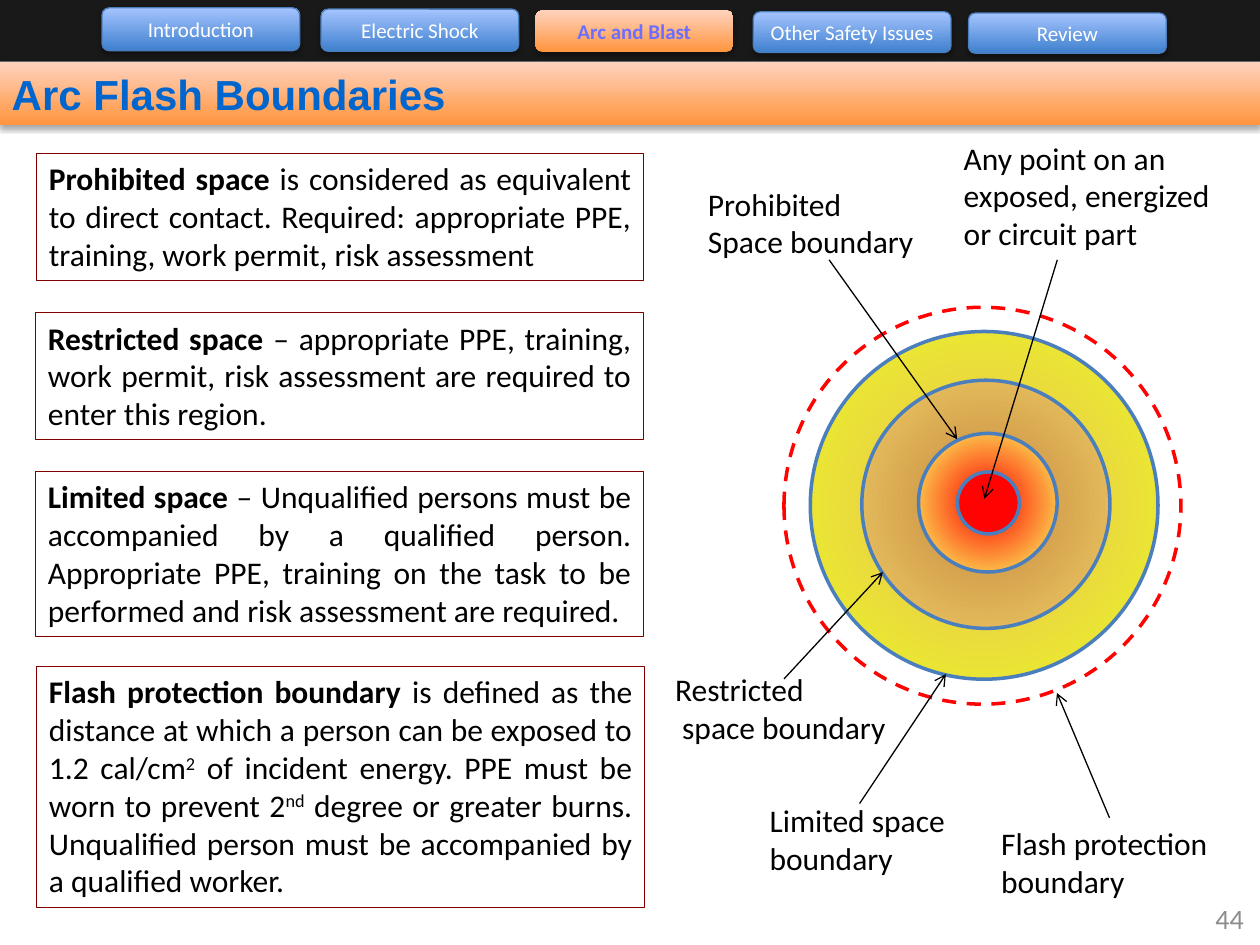
from lxml.etree import SubElement
from pptx import Presentation
from pptx.dml.color import RGBColor
from pptx.enum.dml import MSO_LINE
from pptx.enum.shapes import MSO_CONNECTOR, MSO_SHAPE
from pptx.enum.text import MSO_ANCHOR, MSO_AUTO_SIZE, PP_ALIGN
from pptx.oxml.ns import qn
from pptx.util import Pt

BLUE = ("3F80CE", "A4C4FF")
ORANGE = ("FF953E", "FFD2BD")
OUTLINE = "4B7EBC"
BLACK = "000000"
RED = "FF0202"


def color(value):
    return RGBColor.from_string(value)


class SlideBuilder:
    body_font = "Calibri"
    body_size = 18

    def __init__(self, slide):
        self.slide = slide
        self.shapes = slide.shapes

    def set_text(self, frame, text, size=body_size, fill=BLACK, bold=False,
                 align=PP_ALIGN.LEFT, font=body_font):
        frame.text = text
        for paragraph in frame.paragraphs:
            paragraph.alignment = align
            for run in paragraph.runs:
                self.style(run, size, fill, bold, font)

    def style(self, run, size=body_size, fill=BLACK, bold=False, font=body_font):
        run.font.size = Pt(size)
        run.font.name = font
        run.font.bold = bold
        run.font.color.rgb = color(fill)

    def outline(self, shape, value, width):
        shape.line.color.rgb = color(value)
        shape.line.width = Pt(width)

    def gradient(self, shape, colors, end=1.0):
        shape.fill.gradient()
        shape.fill.gradient_angle = 90
        for stop, value, position in zip(shape.fill.gradient_stops, colors, (0, end)):
            stop.color.rgb = color(value)
            stop.position = position

    def radial(self, shape, colors, end):
        self.gradient(shape, colors, end)
        grad = shape._element.spPr.find(qn("a:gradFill"))
        grad.remove(grad.find(qn("a:lin")))
        circle = SubElement(grad, qn("a:path"), path="circle")
        SubElement(circle, qn("a:fillToRect"), l="50000", t="50000", r="50000", b="50000")

    def shadow(self, shape):
        shape.shadow.inherit = False
        effects = shape._element.spPr.find(qn("a:effectLst"))
        outer = SubElement(effects, qn("a:outerShdw"), blurRad=str(Pt(3.1)),
                           dist=str(Pt(1.8)), dir="5400000", rotWithShape="0")
        shade = SubElement(outer, qn("a:srgbClr"), val=BLACK)
        SubElement(shade, qn("a:alpha"), val="35000")

    def title(self, text, left, top, width, height):
        title = self.shapes.title
        title.left, title.top, title.width, title.height = map(Pt, (left, top, width, height))
        self.gradient(title, ORANGE)
        self.shadow(title)
        frame = title.text_frame
        self.set_text(frame, text, 24, "0065CC", True, font="Arial")
        frame.auto_size = MSO_AUTO_SIZE.NONE
        frame.vertical_anchor = MSO_ANCHOR.TOP

    def band(self, left, top, width, height, fill):
        band = self.shapes.add_shape(MSO_SHAPE.RECTANGLE, *map(Pt, (left, top, width, height)))
        band.shadow.inherit = False
        band.fill.solid()
        band.fill.fore_color.rgb = color(fill)
        band.line.fill.background()

    def button(self, text, left, top, width, height, current):
        button = self.shapes.add_shape(MSO_SHAPE.ROUNDED_RECTANGLE,
                                       *map(Pt, (left, top, width, height)))
        self.gradient(button, ORANGE if current else BLUE)
        if current:
            button.line.fill.background()
        else:
            self.outline(button, OUTLINE, 0.75)
        self.shadow(button)
        self.set_text(button.text_frame, text, 12, "6C6EFF" if current else "FFFFFF",
                      current, PP_ALIGN.CENTER)

    def circle(self, x, y, diameter, line=OUTLINE, parent=None):
        radius = diameter / 2
        circle = (parent or self.shapes).add_shape(
            MSO_SHAPE.OVAL, Pt(x - radius), Pt(y - radius), Pt(diameter), Pt(diameter))
        circle.shadow.inherit = False
        circle.fill.background()
        self.outline(circle, line, 2)
        return circle

    def label(self, text, left, top, width, height, **style):
        label = self.shapes.add_textbox(*map(Pt, (left, top, width, height)))
        label.text_frame.word_wrap = True
        self.set_text(label.text_frame, text, **style)
        return label

    def definition(self, parts, left, top, width, height):
        box = self.label("", left, top, width, height)
        self.outline(box, "800000", 0.75)
        paragraph = box.text_frame.paragraphs[0]
        paragraph.alignment = PP_ALIGN.JUSTIFY
        for index, text in enumerate(parts):
            run = paragraph.add_run()
            run.text = text
            self.style(run, bold=index == 0)
            if text in ("2", "nd"):
                run._r.get_or_add_rPr().set("baseline", "30000")

    def arrow(self, start, end):
        arrow = self.shapes.add_connector(MSO_CONNECTOR.STRAIGHT, *map(Pt, (*start, *end)))
        self.outline(arrow, BLACK, 0.75)
        properties = arrow._element.spPr
        SubElement(properties.find(qn("a:ln")), qn("a:tailEnd"), type="arrow")
        SubElement(properties, qn("a:effectLst"))
        return arrow


SECTIONS = [("Introduction", 58.3), ("Electric Shock", 183.5), ("Arc and Blast", 306),
            ("Other Safety Issues", 430.5), ("Review", 553.5)]
RINGS = [(562.4, 288.8, 198.7, ("E9BD56", "EAF426"), 0.98),
         (563.4, 288.2, 141.8, ("C5873D", "EFCC67"), 0.99),
         (564.5, 287.3, 79.2, ("FF0000", "FBE257"), 0.86)]
CALLOUTS = [
    ("Prohibited\nSpace boundary", (397.5, 102, 133, 51), (473.8, 148.5), (547, 251)),
    ("Any point on an exposed, energized or circuit part",
     (543.6, 75.6, 170, 72.7), (604.2, 148.5), (562.5, 285)),
    ("Restricted\n space boundary", (378.7, 379.5, 144, 51), (448, 388), (504.5, 327)),
    ("Limited space boundary", (432.7, 454.3, 124, 51), (491.2, 459.2), (540.5, 385.2)),
    ("Flash protection boundary", (565, 467.3, 138, 51), (634, 467.3), (604, 396)),
]
DEFINITIONS = [
    (20.9, 87.6, 347, 72.7,
     ["Prohibited space", " is considered as equivalent to direct contact. Required: "
      "appropriate PPE, training, work permit, risk assessment"]),
    (20.3, 178.5, 347.6, 72.7,
     ["Restricted space", " – appropriate PPE, training, work permit, risk assessment "
      "are required to enter this region."]),
    (20.3, 269.3, 347.6, 94.5,
     ["Limited space", " – Unqualified persons must be accompanied by a qualified person. "
      "Appropriate PPE, training on the task to be performed and risk assessment are required."]),
    (20.9, 380.7, 347.6, 138,
     ["Flash protection boundary", " is defined as the distance at which a person can be "
      "exposed to 1.2 cal/cm", "2", " of incident energy. PPE must be worn to prevent 2", "nd",
      " degree or greater burns. Unqualified person must be accompanied by a qualified worker."]),
]


def main():
    deck = Presentation()
    deck.slide_width, deck.slide_height = Pt(720), Pt(540)
    page = SlideBuilder(deck.slides.add_slide(deck.slide_layouts[5]))

    page.band(0, 0, 720, 35.3, "191919")
    for index, (section, left) in enumerate(SECTIONS):
        page.button(section, left, 4.5 + 0.75 * index, 113, 24.5 - 0.4 * index,
                    section == "Arc and Blast")
    page.title("Arc Flash Boundaries", -0.5, 35.3, 720.5, 36.3)

    spaces = page.shapes.add_group_shape()
    for x, y, diameter, colors, end in RINGS:
        page.radial(page.circle(x, y, diameter, parent=spaces.shapes), colors, end)
    live_part = page.circle(564.8, 287.4, 35.4)
    live_part.fill.solid()
    live_part.fill.fore_color.rgb = color(RED)
    flash_boundary = page.circle(561.4, 289, 226.8, RED)
    flash_boundary.line.dash_style = MSO_LINE.DASH

    for text, place, start, end in CALLOUTS:
        callout = page.label(text, *place)
        pointer = page.arrow(start, end)
        if start == (place[0] + place[2] / 2, place[1]):
            pointer.begin_connect(callout, 0)

    for *place, parts in DEFINITIONS:
        page.definition(parts, *place)

    page_number = page.label("44", 682.5, 510.5, 35.3, 28.8, size=16, fill="8C8C8C",
                             align=PP_ALIGN.RIGHT)
    page_number.text_frame.vertical_anchor = MSO_ANCHOR.MIDDLE
    deck.save("out.pptx")


if __name__ == "__main__":
    main()
